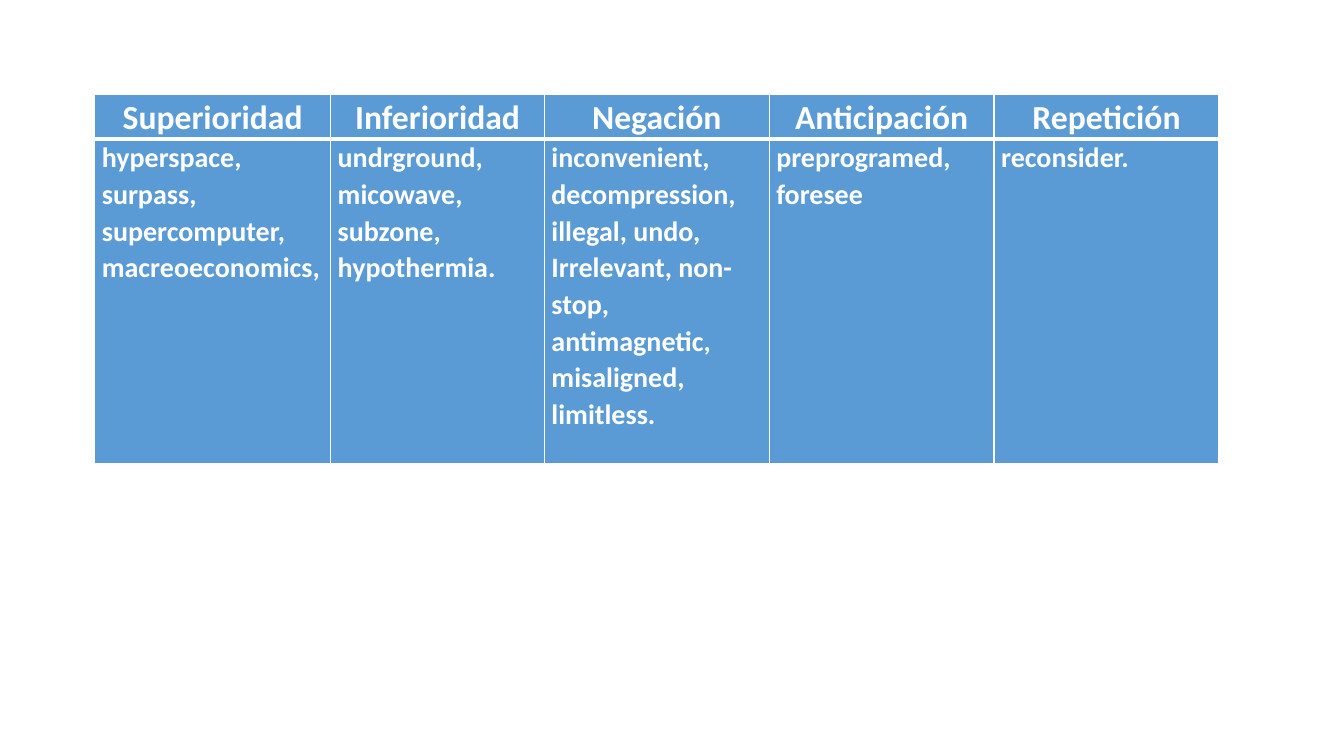
from lxml.etree import SubElement
from pptx import Presentation
from pptx.dml.color import RGBColor
from pptx.enum.text import PP_ALIGN
from pptx.oxml.ns import qn
from pptx.util import Inches, Pt

WHITE = RGBColor(0xFF, 0xFF, 0xFF)
BLUE = RGBColor(0x5B, 0x9B, 0xD5)
FONT = "Calibri"

MARGIN = Inches(0.94)
COLUMN_WIDTHS = (2.34, 2.12, 2.23, 2.23, 2.23)
ROW_HEIGHTS = (0.34, 3.22)
THIN, THICK = Pt(1), Pt(3)

PREFIX_GROUPS = {
    "Superioridad": "hyperspace, surpass, supercomputer, macreoeconomics,",
    "Inferioridad": "undrground, micowave, subzone, hypothermia.",
    "Negación": "inconvenient, decompression, illegal, undo, Irrelevant, "
                "non-stop, antimagnetic, misaligned, limitless.",
    "Anticipación": "preprogramed, foresee",
    "Repetición": "reconsider.",
}


def set_borders(cell, top, bottom):
    """Draw white borders; call before filling, as lines come first in tcPr."""
    properties = cell._tc.get_or_add_tcPr()
    widths = {"a:lnL": THIN, "a:lnR": THIN, "a:lnT": top, "a:lnB": bottom}
    for tag, width in widths.items():
        line = SubElement(properties, qn(tag), w=str(width))
        fill = SubElement(line, qn("a:solidFill"))
        SubElement(fill, qn("a:srgbClr"), val=str(WHITE))


def write_cell(cell, text, size, alignment):
    cell.margin_left = cell.margin_right = Inches(0.07)
    cell.margin_top = cell.margin_bottom = 0
    cell.fill.solid()
    cell.fill.fore_color.rgb = BLUE
    cell.text_frame.text = text
    para = cell.text_frame.paragraphs[0]
    para.alignment = alignment
    para.line_spacing = 1.07
    para.space_after = Pt(8)
    font = para.runs[0].font
    font.name = FONT
    font.size = Pt(size)
    font.bold = True
    font.color.rgb = WHITE


def add_prefix_table(page):
    frame = page.shapes.add_table(
        len(ROW_HEIGHTS), len(COLUMN_WIDTHS), MARGIN, MARGIN,
        Inches(sum(COLUMN_WIDTHS)), Inches(sum(ROW_HEIGHTS)))
    table = frame.table
    for column, width in zip(table.columns, COLUMN_WIDTHS):
        column.width = Inches(width)
    for row, height in zip(table.rows, ROW_HEIGHTS):
        row.height = Inches(height)
    for index, (heading, words) in enumerate(PREFIX_GROUPS.items()):
        header, body = table.cell(0, index), table.cell(1, index)
        set_borders(header, THIN, THICK)
        write_cell(header, heading, 24, PP_ALIGN.CENTER)
        set_borders(body, THICK, THIN)
        write_cell(body, words, 20, PP_ALIGN.LEFT)


def main():
    deck = Presentation()
    deck.slide_width, deck.slide_height = Inches(13.33), Inches(7.5)
    page = deck.slides.add_slide(deck.slide_layouts[6])
    add_prefix_table(page)
    deck.save("out.pptx")


if __name__ == "__main__":
    main()
